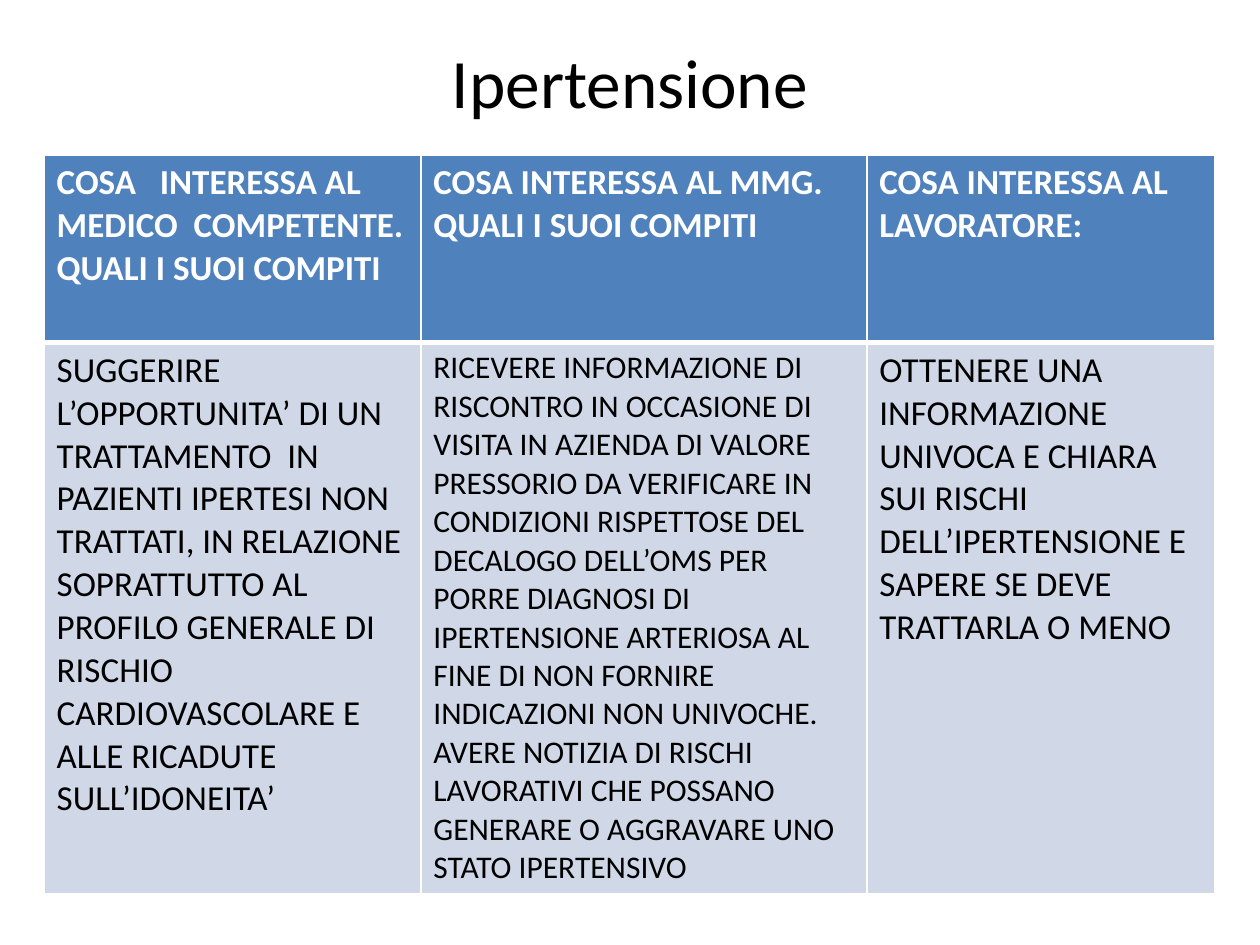
from lxml import etree
from pptx import Presentation
from pptx.dml.color import RGBColor
from pptx.enum.text import MSO_ANCHOR, PP_ALIGN
from pptx.oxml.ns import qn
from pptx.util import Inches, Pt

CENTER = PP_ALIGN.CENTER
MIDDLE = MSO_ANCHOR.MIDDLE
BLACK = RGBColor(0x00, 0x00, 0x00)
WHITE = RGBColor(0xFF, 0xFF, 0xFF)
HEADER_BLUE = RGBColor(0x4F, 0x81, 0xBD)
BODY_BLUE = RGBColor(0xD0, 0xD8, 0xE8)
FONT = "Calibri"

COLUMN_WIDTHS = [2.99, 3.54, 2.76]
ROW_HEIGHTS = [1.49, 4.26]
BODY_SIZES = [20, 18, 20]
HEADERS = [
    "COSA   INTERESSA AL MEDICO  COMPETENTE. QUALI I SUOI COMPITI",
    "COSA INTERESSA AL MMG. QUALI I SUOI COMPITI",
    "COSA INTERESSA AL LAVORATORE:",
]
BODIES = [
    "SUGGERIRE L’OPPORTUNITA’ DI UN TRATTAMENTO  IN PAZIENTI IPERTESI NON "
    "TRATTATI, IN RELAZIONE SOPRATTUTTO AL PROFILO GENERALE DI RISCHIO "
    "CARDIOVASCOLARE E ALLE RICADUTE SULL’IDONEITA’",
    "RICEVERE INFORMAZIONE DI RISCONTRO IN OCCASIONE DI VISITA IN AZIENDA DI "
    "VALORE PRESSORIO DA VERIFICARE IN CONDIZIONI RISPETTOSE DEL DECALOGO "
    "DELL’OMS PER PORRE DIAGNOSI DI IPERTENSIONE ARTERIOSA AL FINE DI NON "
    "FORNIRE INDICAZIONI NON UNIVOCHE. AVERE NOTIZIA DI RISCHI LAVORATIVI CHE "
    "POSSANO GENERARE O AGGRAVARE UNO STATO IPERTENSIVO",
    "OTTENERE UNA INFORMAZIONE UNIVOCA E CHIARA SUI RISCHI DELL’IPERTENSIONE "
    "E SAPERE SE DEVE TRATTARLA O MENO",
]


def set_border(cell, side, width):
    properties = cell._tc.get_or_add_tcPr()
    line = etree.SubElement(properties, qn(f"a:ln{side}"), w=str(Pt(width)))
    fill = etree.SubElement(line, qn("a:solidFill"))
    etree.SubElement(fill, qn("a:srgbClr"), val=str(WHITE))


def set_font(para, size, color, bold):
    para.font.name = FONT
    para.font.size = Pt(size)
    para.font.color.rgb = color
    para.font.bold = bold


deck = Presentation()
deck.slide_width, deck.slide_height = Inches(10), Inches(7.5)
page = deck.slides.add_slide(deck.slide_layouts[5])

# Title
title = page.shapes.title
title.left, title.top = Inches(0.51), Inches(0.29)
title.width, title.height = Inches(8.98), Inches(0.71)
title.text_frame.text = "Ipertensione"
title.text_frame.vertical_anchor = MIDDLE
title_para = title.text_frame.paragraphs[0]
title_para.alignment = CENTER
set_font(title_para, 39.6, BLACK, False)

# Table grid
table = page.shapes.add_table(
    len(ROW_HEIGHTS), len(COLUMN_WIDTHS), Inches(0.35), Inches(1.23),
    Inches(sum(COLUMN_WIDTHS)), Inches(sum(ROW_HEIGHTS))).table
for column, width in zip(table.columns, COLUMN_WIDTHS):
    column.width = Inches(width)
for row, height in zip(table.rows, ROW_HEIGHTS):
    row.height = Inches(height)

# Cells: header row, then body row, with a thick line between them
rows = [
    (HEADERS, [20] * 3, WHITE, True, HEADER_BLUE, "B"),
    (BODIES, BODY_SIZES, BLACK, False, BODY_BLUE, "T"),
]
for row, (texts, sizes, color, bold, background, thick_side) in zip(table.rows, rows):
    for cell, text, size in zip(row.cells, texts, sizes):
        cell.text = text
        set_font(cell.text_frame.paragraphs[0], size, color, bold)
        for side in "LRTB":
            set_border(cell, side, 3 if side == thick_side else 1)
        cell.fill.solid()
        cell.fill.fore_color.rgb = background

deck.save("out.pptx")
